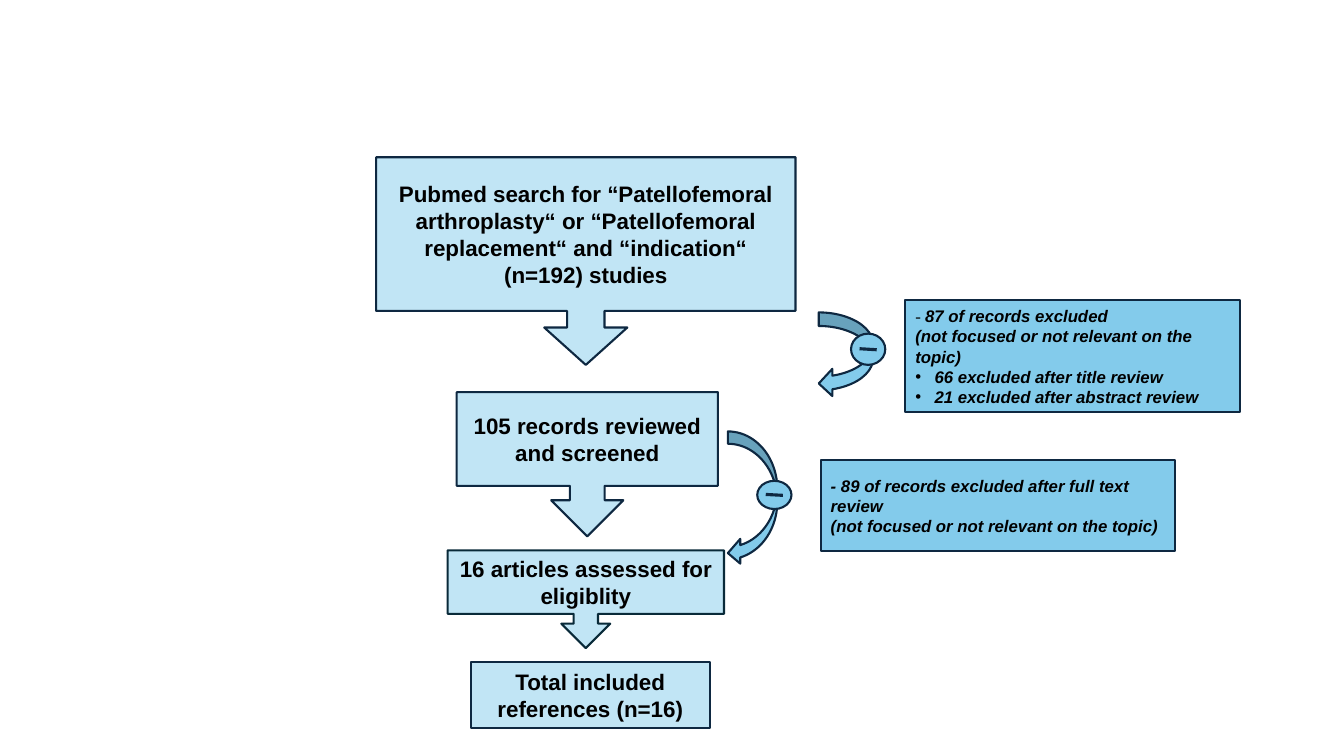
from lxml.etree import SubElement
from pptx import Presentation
from pptx.dml.color import RGBColor
from pptx.enum.shapes import MSO_CONNECTOR as LINK, MSO_SHAPE as SHAPE
from pptx.enum.text import MSO_ANCHOR as ANCHOR, PP_ALIGN as ALIGN
from pptx.oxml.ns import qn
from pptx.util import Inches, Pt

PALE = RGBColor(0xC1, 0xE5, 0xF5)
SKY = RGBColor(0x83, 0xCB, 0xEB)
NAVY = RGBColor(0x0E, 0x28, 0x41)
TEAL = RGBColor(0x09, 0x2A, 0x39)
BLACK = RGBColor(0, 0, 0)
WIDE, HIGH = Inches(13.33), Inches(7.5)


def place(box):
    x, y, w, h = box
    return [int(part * side / 100) for part, side in
            ((x, WIDE), (y, HIGH), (w, WIDE), (h, HIGH))]


def draw(slide, kind, box, fill, edge=NAVY):
    shape = slide.shapes.add_shape(kind, *place(box))
    shape.shadow.inherit = False
    shape.fill.solid()
    shape.fill.fore_color.rgb = fill
    shape.line.color.rgb = edge
    shape.line.width = Pt(1.5)
    return shape


def style(font, size, slant=False):
    font.name = "Arial"
    font.size = Pt(size)
    font.bold = True
    font.italic = slant
    font.color.rgb = BLACK


def write(shape, lines, size, align, slant=False):
    frame = shape.text_frame
    frame.word_wrap = True
    frame.vertical_anchor = ANCHOR.MIDDLE
    for i, line in enumerate(lines):
        para = frame.paragraphs[0] if i == 0 else frame.add_paragraph()
        para.alignment = align
        if line.startswith("•"):
            line = line[1:]
            props = para._p.get_or_add_pPr()
            props.set("marL", str(Inches(0.19)))
            props.set("indent", str(-Inches(0.19)))
            SubElement(props, qn("a:buFont"), typeface="Arial")
            SubElement(props, qn("a:buChar"), char="•")
        para.add_run().text = line
        style(para.font, size, slant)


def step(slide, box, lines, kind=SHAPE.DOWN_ARROW_CALLOUT, adjust=(), edge=NAVY):
    shape = draw(slide, kind, box, PALE, edge)
    for i, value in enumerate(adjust):
        shape.adjustments[i] = value
    write(shape, lines, 16, ALIGN.CENTER)


def note(slide, box, lines):
    shape = draw(slide, SHAPE.RECTANGLE, box, SKY)
    write(shape, lines, 12, ALIGN.LEFT, True)
    return shape


def minus(slide, bend, disc):
    draw(slide, SHAPE.CURVED_LEFT_ARROW, bend, SKY)
    draw(slide, SHAPE.OVAL, disc, SKY)
    x, y, w, h = place(disc)
    mid = y + h // 2
    dash = slide.shapes.add_connector(
        LINK.STRAIGHT, x + w // 4, mid - h // 60, x + w * 3 // 4, mid + h // 60)
    dash.line.color.rgb = NAVY
    dash.line.width = Pt(2.25)
    SubElement(dash._element.spPr, qn("a:effectLst"))


def steps(slide):
    step(slide, (35.03, 87.6, 17.78, 8.67),
         ["Total included references (n=16)"], SHAPE.RECTANGLE)
    step(slide, (27.98, 20.8, 31.21, 27.47),
         ["Pubmed search for “Patellofemoral arthroplasty“ or "
          "“Patellofemoral replacement“ and “indication“",
          "(n=192) studies"], adjust=(0.18, 0.2, 0.18, 0.74))
    step(slide, (33.98, 51.87, 19.43, 19.07),
         ["105 records reviewed and screened"], adjust=(0.24, 0.25, 0.25, 0.65))
    step(slide, (33.31, 72.8, 20.56, 12.93),
         ["16 articles assessed for eligiblity"], edge=TEAL)


def notes(slide):
    topic = "(not focused or not relevant on the topic)"
    first = note(slide, (67.37, 39.73, 24.91, 14.8),
                 ["- ", topic, "•66 excluded after title review",
                  "•21 excluded after abstract review"])
    head = first.text_frame.paragraphs[0]
    head.runs[0].font.name = "Times New Roman"
    head.runs[0].font.bold = False
    head.add_run().text = "87 of records excluded"
    note(slide, (61.07, 60.8, 26.33, 12.13),
         ["- 89 of records excluded after full text review", topic])
    minus(slide, (60.92, 41.33, 4.05, 11.2), (63.32, 44.13, 2.55, 4.13))
    minus(slide, (54.16, 57.07, 3.68, 17.73), (56.34, 63.6, 2.55, 3.73))


def main():
    deck = Presentation()
    deck.slide_width, deck.slide_height = WIDE, HIGH
    slide = deck.slides.add_slide(deck.slide_layouts[6])
    steps(slide)
    notes(slide)
    deck.save("out.pptx")


if __name__ == "__main__":
    main()
